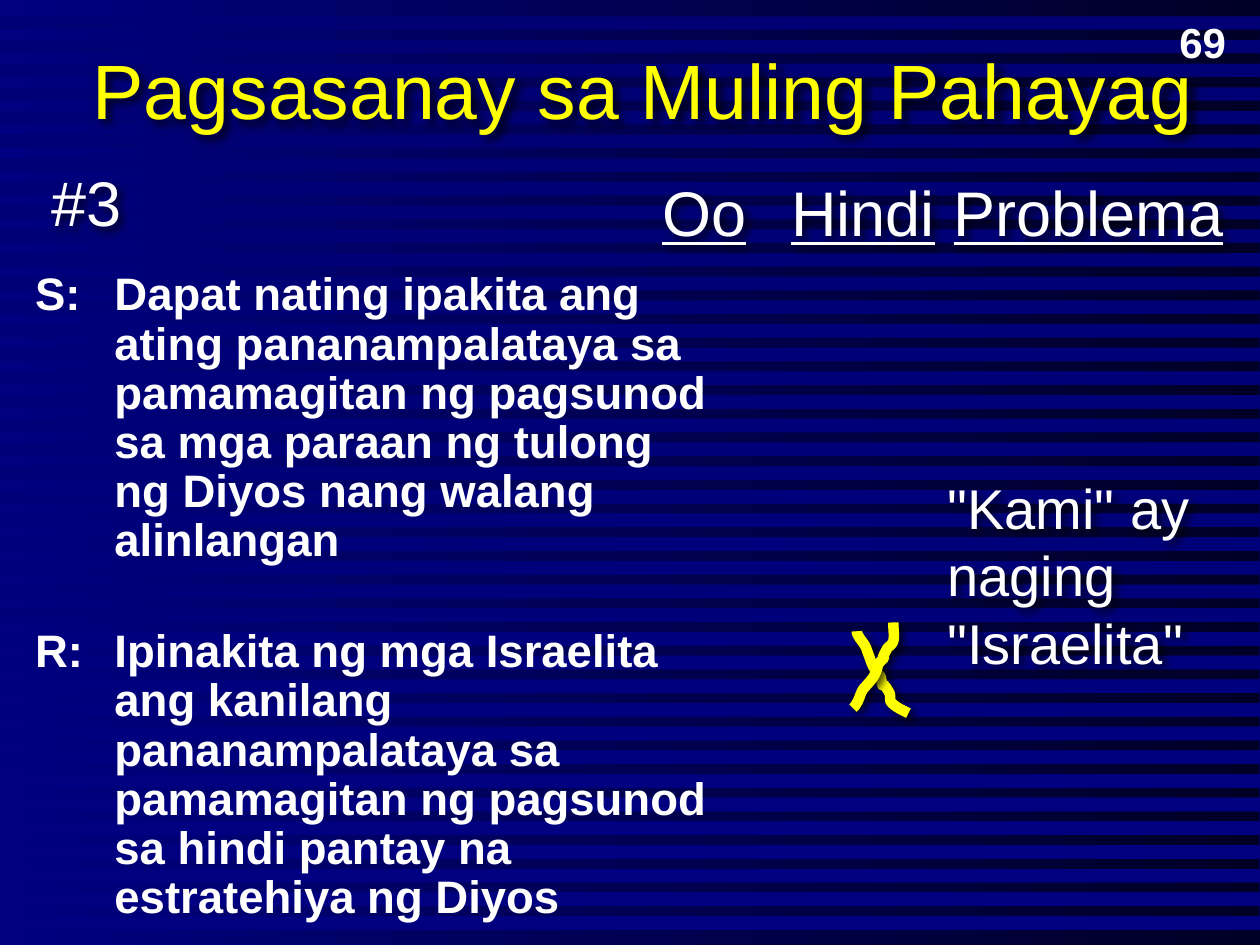
from lxml import etree
from pptx import Presentation
from pptx.dml.color import RGBColor
from pptx.enum.shapes import MSO_SHAPE
from pptx.enum.text import MSO_ANCHOR, PP_ALIGN
from pptx.oxml import parse_xml
from pptx.oxml.ns import nsdecls
from pptx.util import Inches, Pt

RECTANGLE = MSO_SHAPE.RECTANGLE
TOP, MIDDLE = MSO_ANCHOR.TOP, MSO_ANCHOR.MIDDLE
LEFT, CENTER = PP_ALIGN.LEFT, PP_ALIGN.CENTER
NAVY = RGBColor(0x00, 0x00, 0x80)
DEEP_NAVY = RGBColor(0x00, 0x00, 0x74)
MIDNIGHT = RGBColor(0x00, 0x00, 0x26)
YELLOW = RGBColor(0xFF, 0xFF, 0x00)
WHITE = RGBColor(0xFF, 0xFF, 0xFF)
FONT = "Arial"

SHADOW = (
    f'<a:effectLst {nsdecls("a")}>'
    '<a:outerShdw blurRad="63500" dist="38100" dir="2700000">'
    '<a:srgbClr val="000000"><a:alpha val="75000"/></a:srgbClr>'
    '</a:outerShdw></a:effectLst>'
)

deck = Presentation()
deck.slide_width, deck.slide_height = Inches(10), Inches(7.5)
COL = deck.slide_width / 100
ROW = deck.slide_height / 75
slide = deck.slides.add_slide(deck.slide_layouts[5])
shapes = slide.shapes


def paint_gradient(fill, first, last, angle):
    fill.gradient()
    fill.gradient_angle = angle
    for stop, color in zip(fill.gradient_stops, (first, last)):
        stop.color.rgb = color


def write(box, area, texts, size, color=WHITE, align=LEFT, anchor=TOP,
          leading=1.2, bold=False, underline=False, shadow=True):
    left, top, width, height = area
    box.left, box.width = int(left * COL), int(width * COL)
    box.top, box.height = int(top * ROW), int(height * ROW)
    frame = box.text_frame
    frame.word_wrap = True
    frame.vertical_anchor = anchor
    for index, text in enumerate(texts):
        paragraph = frame.add_paragraph() if index else frame.paragraphs[0]
        paragraph.alignment = align
        paragraph.line_spacing = Pt(round(size * leading, 1))
        run = paragraph.add_run()
        run.text = text
        font = run.font
        font.name, font.size, font.bold = FONT, Pt(size), bold
        font.underline = underline
        font.color.rgb = color
    if shadow:
        box.element.spPr.append(parse_xml(SHADOW))
    return frame


paint_gradient(slide.background.fill, DEEP_NAVY, NAVY, 270)
backdrop = shapes.add_shape(RECTANGLE, 0, 0, deck.slide_width, deck.slide_height)
backdrop.shadow.inherit = False
backdrop.line.fill.background()
paint_gradient(backdrop.fill, NAVY, MIDNIGHT, 0)

STRIPE_COUNT, STRIPE_TOP, STRIPE_PITCH, STRIPE_HEIGHT = 39, 1.3, 1.88, 1.05
right = 100 * COL
stripe_points = []
for number in range(STRIPE_COUNT):
    upper = (STRIPE_TOP + number * STRIPE_PITCH) * ROW
    lower = upper + STRIPE_HEIGHT * ROW
    stripe_points += [(right, upper), (0, upper), (0, lower), (right, lower)]
builder = shapes.build_freeform(*stripe_points[0], scale=1.0)
builder.add_line_segments(stripe_points[1:], close=True)
stripes = builder.convert_to_shape()
stripes.shadow.inherit = False
stripes.line.fill.background()
paint_gradient(stripes.fill, DEEP_NAVY, NAVY, 270)

title = shapes.title
shapes.element.append(title.element)
write(title, (5.8, 0.8, 90.5, 12.5), ["Pagsasanay sa Muling Pahayag"], 44,
      YELLOW, CENTER, MIDDLE)

statements = write(
    shapes.add_textbox(0, 0, 0, 0), (1.8, 21, 56.1, 55.2),
    ["S:\tDapat nating ipakita ang ating pananampalataya sa pamamagitan ng "
     "pagsunod sa mga paraan ng tulong ng Diyos nang walang alinlangan",
     "R:\tIpinakita ng mga Israelita ang kanilang pananampalataya sa "
     "pamamagitan ng pagsunod sa hindi pantay na estratehiya ng Diyos"],
    26, leading=1.08, bold=True, shadow=False)
HANGING = int(6.3 * COL)
for paragraph in statements.paragraphs:
    properties = paragraph._p.get_or_add_pPr()
    properties.set("marL", str(HANGING))
    properties.set("indent", str(-HANGING))
statements.paragraphs[1].space_before = Pt(35.4)

write(shapes.add_textbox(0, 0, 0, 0), (91.7, 0.8, 7.5, 5), ["69"], 24,
      align=CENTER, bold=True, shadow=False)

for heading, left, width in (("Oo", 51.6, 11.4), ("Hindi", 61.8, 15),
                             ("Problema", 74.7, 25.3)):
    write(shapes.add_textbox(0, 0, 0, 0), (left, 13.3, width, 5.7), [heading],
          36, underline=True)
write(shapes.add_textbox(0, 0, 0, 0), (3.1, 12.5, 12.5, 6.5), ["#3"], 36)

CROSS_STROKES = (
    ((68, 50.1), (68, 50.3), (68.1, 50.4), (68.2, 50.6), (68.4, 50.9),
     (68.7, 51.2), (68.8, 51.6), (69.2, 52.6), (69.2, 53), (69.9, 53.7),
     (70.2, 55.3), (69.7, 53.4), (70.6, 55), (70.7, 55.3), (70.6, 55.5),
     (70.7, 55.7), (71, 56.1), (71.7, 56.4), (72.1, 56.6)),
    ((67.7, 56.2), (67.8, 56.1), (67.9, 56), (68, 55.8), (68.2, 55.5),
     (68.3, 55), (68.5, 54.7), (69.2, 53.9), (69.5, 53.7), (69.7, 52.7),
     (70.8, 51.5), (69.5, 53.1), (70.4, 51.5), (70.5, 51.3), (70.8, 51.2),
     (70.9, 50.9), (71, 50.5), (70.9, 49.9), (70.9, 49.4)),
)
STEPS = 8
for stroke in CROSS_STROKES:
    curve = [(stroke[0][0] * COL, stroke[0][1] * ROW)]
    for start in range(0, len(stroke) - 1, 3):
        bend = stroke[start:start + 4]
        for step in range(1, STEPS + 1):
            t = step / STEPS
            weights = ((1 - t) ** 3, 3 * t * (1 - t) ** 2,
                       3 * t ** 2 * (1 - t), t ** 3)
            x = sum(weight * point[0] for weight, point in zip(weights, bend))
            y = sum(weight * point[1] for weight, point in zip(weights, bend))
            curve.append((x * COL, y * ROW))
    builder = shapes.build_freeform(*curve[0], scale=1.0)
    builder.add_line_segments(curve[1:], close=False)
    cross_stroke = builder.convert_to_shape()
    cross_stroke.fill.background()
    cross_stroke.line.color.rgb = YELLOW
    cross_stroke.line.width = Pt(6)
    etree.SubElement(cross_stroke.line._ln, "{%s}round" % cross_stroke.element.nsmap["a"])
    cross_stroke.element.spPr.append(parse_xml(SHADOW))

write(shapes.add_textbox(0, 0, 0, 0), (74.2, 37.1, 25.3, 31.2),
      ['"Kami" ay naging "Israelita"'], 32)

deck.save("out.pptx")
